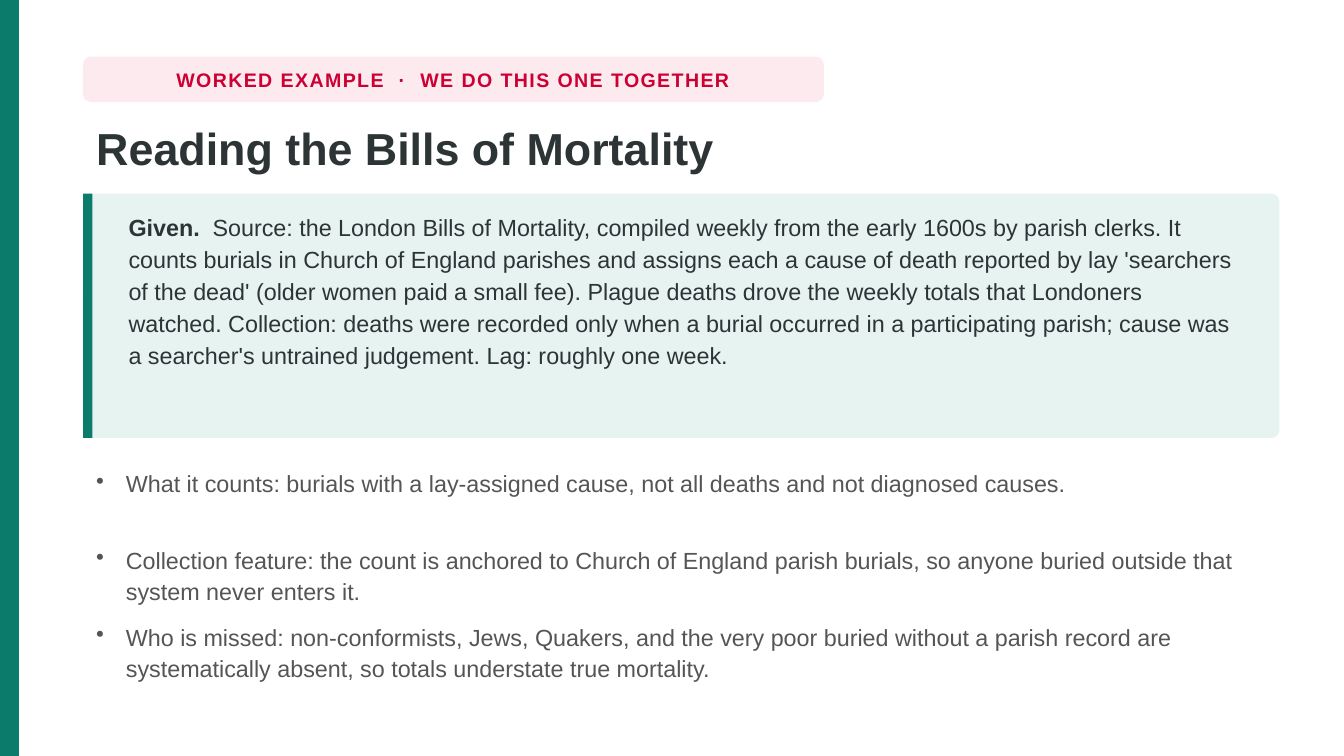
from lxml import etree
from pptx import Presentation
from pptx.dml.color import RGBColor
from pptx.enum.shapes import MSO_SHAPE
from pptx.enum.text import MSO_ANCHOR, PP_ALIGN
from pptx.oxml.ns import qn
from pptx.util import Cm, Pt

RECT, ROUNDED = MSO_SHAPE.RECTANGLE, MSO_SHAPE.ROUNDED_RECTANGLE
TOP, MIDDLE = MSO_ANCHOR.TOP, MSO_ANCHOR.MIDDLE
LEFT, CENTER = PP_ALIGN.LEFT, PP_ALIGN.CENTER

# Content
TAG = "WORKED EXAMPLE  ·  WE DO THIS ONE TOGETHER"
TITLE = "Reading the Bills of Mortality"
GIVEN_LABEL = "Given.  "
GIVEN = (
    "Source: the London Bills of Mortality, compiled weekly from the early 1600s "
    "by parish clerks. It counts burials in Church of England parishes and assigns "
    "each a cause of death reported by lay 'searchers of the dead' (older women paid "
    "a small fee). Plague deaths drove the weekly totals that Londoners watched. "
    "Collection: deaths were recorded only when a burial occurred in a participating "
    "parish; cause was a searcher's untrained judgement. Lag: roughly one week."
)
# Each finding with the height of its box in cm
FINDINGS = [
    ("What it counts: burials with a lay-assigned cause, not all deaths and not "
     "diagnosed causes.", 1.24),
    ("Collection feature: the count is anchored to Church of England parish burials, "
     "so anyone buried outside that system never enters it.", 1.24),
    ("Who is missed: non-conformists, Jews, Quakers, and the very poor buried without "
     "a parish record are systematically absent, so totals understate true mortality.",
     1.8),
]

THEME = {
    "font": "Arial",
    "accent": "0B7B6B", "panel": "E6F3F0", "tag_fill": "FDEAEF", "tag_text": "CC0033",
    "ink": "2D3436", "body": "555555", "background": "FFFFFF",
    "tag_size": 10.5, "title_size": 24, "body_size": 12.5,
}

# Layout in cm
SLIDE_W, SLIDE_H = 25.4, 14.29
MARGIN, CONTENT_W = 1.57, 22.61
EDGE_W = 0.36
TAG_BOX = (MARGIN, 1.07, 14, 0.86)
TITLE_BOX = (MARGIN, 2.13, CONTENT_W, 1.42)
PANEL_TOP, PANEL_H, PANEL_BAR_W = 3.66, 4.62, 0.18
PANEL_PAD_X, PANEL_PAD_Y = 0.61, 0.18
FINDINGS_TOP, FINDING_GAP = 8.69, 0.21
BULLET_INDENT = 0.56
CORNER = 0.15


def add_block(slide, box, fill, corner=0):
    left, top, width, height = box
    block = slide.shapes.add_shape(ROUNDED if corner else RECT, *map(Cm, box))
    if corner:
        block.adjustments[0] = corner / min(width, height)
    block.shadow.inherit = False
    block.fill.solid()
    block.fill.fore_color.rgb = RGBColor.from_string(THEME[fill])
    block.line.fill.background()


def add_text(slide, box, runs, size, color, spacing=1, align=LEFT, anchor=TOP,
             wrap=True, bullet=False, tracking=0):
    """Add one paragraph; runs are (text, bold) pairs."""
    frame = slide.shapes.add_textbox(*map(Cm, box)).text_frame
    frame.word_wrap = wrap
    frame.vertical_anchor = anchor
    paragraph = frame.paragraphs[0]
    paragraph.alignment = align
    paragraph.line_spacing = spacing
    if bullet:
        properties = paragraph._p.get_or_add_pPr()
        properties.set("marL", str(Cm(BULLET_INDENT)))
        properties.set("indent", str(-Cm(BULLET_INDENT)))
        etree.SubElement(properties, qn("a:buChar")).set("char", "•")
    for text, bold in runs:
        run = paragraph.add_run()
        run.text = text
        run.font.name = THEME["font"]
        run.font.size = Pt(THEME[size])
        run.font.bold = bold
        run.font.color.rgb = RGBColor.from_string(THEME[color])
        if tracking:
            run._r.get_or_add_rPr().set("spc", str(tracking))


def main():
    deck = Presentation()
    deck.slide_width, deck.slide_height = Cm(SLIDE_W), Cm(SLIDE_H)
    slide = deck.slides.add_slide(deck.slide_layouts[6])
    slide.background.fill.solid()
    slide.background.fill.fore_color.rgb = RGBColor.from_string(THEME["background"])

    # Edge stripe, tag and title
    add_block(slide, (0, 0, EDGE_W, SLIDE_H), "accent")
    add_block(slide, TAG_BOX, "tag_fill", CORNER)
    add_text(slide, TAG_BOX, [(TAG, True)], "tag_size", "tag_text",
             align=CENTER, anchor=MIDDLE, wrap=False, tracking=80)
    add_text(slide, TITLE_BOX, [(TITLE, True)], "title_size", "ink", spacing=1.02)

    # Panel with the given source
    add_block(slide, (MARGIN, PANEL_TOP, CONTENT_W, PANEL_H), "panel", CORNER)
    add_block(slide, (MARGIN, PANEL_TOP, PANEL_BAR_W, PANEL_H), "accent")
    given_box = (MARGIN + PANEL_PAD_X, PANEL_TOP + PANEL_PAD_Y,
                 CONTENT_W - 2 * PANEL_PAD_X, PANEL_H - 2 * PANEL_PAD_Y)
    add_text(slide, given_box, [(GIVEN_LABEL, True), (GIVEN, False)],
             "body_size", "ink", spacing=1.14)

    # Findings, stacked with equal gaps
    top = FINDINGS_TOP
    for finding, height in FINDINGS:
        add_text(slide, (MARGIN, top, CONTENT_W, height), [(finding, False)],
                 "body_size", "body", spacing=1.12, bullet=True)
        top += height + FINDING_GAP

    deck.save("out.pptx")


if __name__ == "__main__":
    main()
